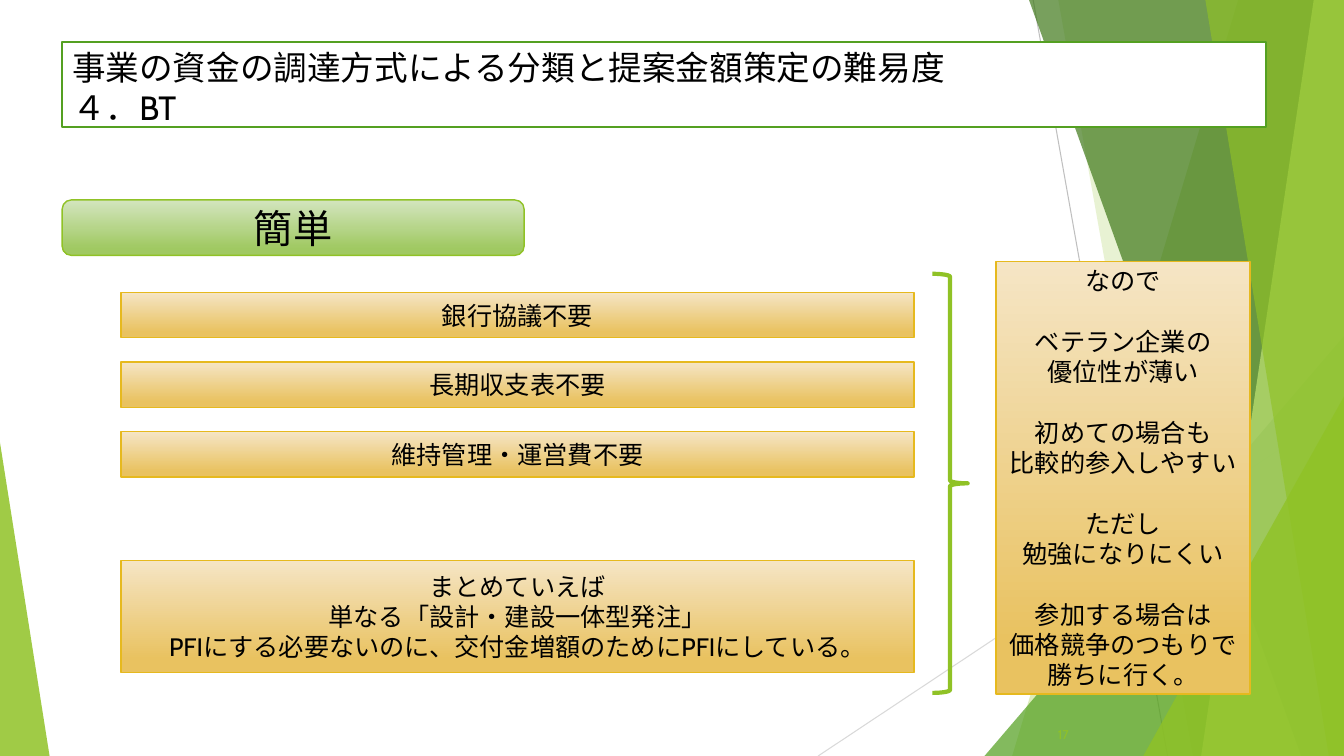
from pptx import Presentation
from pptx.dml.color import RGBColor
from pptx.enum.shapes import MSO_CONNECTOR, MSO_SHAPE as SHAPE
from pptx.enum.text import MSO_ANCHOR as ANCHOR, PP_ALIGN as ALIGN
from pptx.oxml.ns import qn
from pptx.util import Inches, Pt
from lxml.etree import SubElement

# Grid of 160 columns by 90 rows
WIDTH, HEIGHT = Inches(13.333), Inches(7.5)
COLS, ROWS = 160, 90

BLACK = RGBColor(0x00, 0x00, 0x00)
WHITE = RGBColor(0xFF, 0xFF, 0xFF)
GRAY = RGBColor(0xBF, 0xBF, 0xBF)
PALE_GRAY = RGBColor(0xD9, 0xD9, 0xD9)
GREEN = RGBColor(0x90, 0xC2, 0x26)
MID_GREEN = RGBColor(0x54, 0xA0, 0x21)
DARK_GREEN = RGBColor(0x3F, 0x78, 0x19)
LIME = RGBColor(0xC0, 0xE4, 0x74)
GOLD = RGBColor(0xE6, 0xB9, 0x1E)
GREEN_FADE = RGBColor(0xD3, 0xE5, 0xBE), RGBColor(0xA0, 0xC9, 0x62)
GOLD_FADE = RGBColor(0xF5, 0xE5, 0xC5), RGBColor(0xE9, 0xC2, 0x60)

FONT = "Cabin"
BODY = {"name": FONT, "size": Pt(18)}
BLANK_LINE = Pt(21.7)

TITLE = "事業の資金の調達方式による分類と提案金額策定の難易度\v４．BT"
REASONS = ["銀行協議不要", "長期収支表不要", "維持管理・運営費不要"]
SUMMARY = [
    "まとめていえば",
    "単なる「設計・建設一体型発注」",
    "PFIにする必要ないのに、交付金増額のためにPFIにしている。",
]
CONCLUSIONS = [
    ["なので"],
    ["ベテラン企業の", "優位性が薄い"],
    ["初めての場合も", "比較的参入しやすい"],
    ["ただし", "勉強になりにくい"],
    ["参加する場合は", "価格競争のつもりで", "勝ちに行く。"],
]


def col(n):
    return round(WIDTH * n / COLS)


def row(n):
    return round(HEIGHT * n / ROWS)


def fill_clear(sp, color, opacity):
    """Fill without outline, at an opacity in percent."""
    sp.shadow.inherit = False
    sp.line.fill.background()
    sp.fill.solid()
    sp.fill.fore_color.rgb = color
    clr = sp._element.spPr.find(qn("a:solidFill"))[0]
    SubElement(clr, qn("a:alpha")).set("val", str(opacity * 1000))


def add_hairline(s, x1, y1, x2, y2, color):
    line = s.shapes.add_connector(
        MSO_CONNECTOR.STRAIGHT, col(x1), row(y1), col(x2), row(y2))
    line.line.color.rgb = color
    line.line.width = Pt(0.75)
    SubElement(line._element.spPr, qn("a:effectLst"))


def add_band(s, top, bottom, color, opacity):
    """Full-height band from a slanted left edge to the right slide edge."""
    builder = s.shapes.build_freeform(col(top), 0)
    builder.add_line_segments(
        [(WIDTH, 0), (WIDTH, HEIGHT), (col(bottom), HEIGHT)], close=True)
    fill_clear(builder.convert_to_shape(), color, opacity)


def add_triangle(s, x, y, w, apex, color, opacity):
    """Triangle standing on the bottom slide edge."""
    sp = s.shapes.add_shape(
        SHAPE.ISOSCELES_TRIANGLE, col(x), row(y), col(w), row(ROWS - y))
    sp.adjustments[0] = apex
    fill_clear(sp, color, opacity)


def add_outlined(s, kind, x, y, w, h, color, width):
    sp = s.shapes.add_shape(kind, col(x), row(y), col(w), row(h))
    sp.shadow.inherit = False
    sp.fill.background()
    sp.line.color.rgb = color
    sp.line.width = Pt(width)
    return sp


def write(sp, groups, font, align=ALIGN.CENTER, anchor=ANCHOR.MIDDLE, color=BLACK):
    """Write groups of paragraphs, one line of space between groups."""
    tf = sp.text_frame
    tf.word_wrap = True
    tf.vertical_anchor = anchor
    p = tf.paragraphs[0]
    for g, group in enumerate(groups):
        for i, text in enumerate(group):
            if g or i:
                p = tf.add_paragraph()
            p.text = text
            p.alignment = align
            if g and not i:
                p.space_before = BLANK_LINE
            for r in p.runs:
                for key, value in font.items():
                    setattr(r.font, key, value)
                r.font.color.rgb = color


def add_fade_box(s, x, y, w, h, groups, kind=SHAPE.RECTANGLE, fade=GOLD_FADE,
                 line=GOLD, font=BODY):
    sp = add_outlined(s, kind, x, y, w, h, line, 1)
    sp.fill.gradient()
    sp.fill.gradient_angle = 270
    for stop, position, color in zip(sp.fill.gradient_stops, (0, 0.88), fade):
        stop.position = position
        stop.color.rgb = color
    write(sp, groups, font)


def add_backdrop(s):
    add_hairline(s, 123, 0, 139, ROWS, GRAY)
    add_hairline(s, COLS, 48.4, 97.4, ROWS, PALE_GRAY)
    add_band(s, 147.4, 120.5, GREEN, 30)
    add_band(s, 126, 142, GREEN, 20)
    add_triangle(s, 117.2, 40, 42.8, 1, MID_GREEN, 72)
    add_band(s, 122.5, 154.9, DARK_GREEN, 70)
    add_band(s, 156.4, 143, LIME, 70)
    add_band(s, 143.5, 158.2, GREEN, 65)
    add_triangle(s, 136.1, 47.2, 23.9, 1, GREEN, 80)
    add_triangle(s, 0, 52.7, 5.9, 0, GREEN, 85)


def add_title(s):
    sp = add_outlined(s, SHAPE.RECTANGLE, 7.4, 5, 143.3, 10.1, MID_GREEN, 1.5)
    sp.fill.solid()
    sp.fill.fore_color.rgb = WHITE
    write(sp, [[TITLE]], {"name": FONT, "size": Pt(24)}, ALIGN.LEFT, ANCHOR.TOP)


def add_page_number(s, number):
    sp = s.shapes.add_textbox(col(120.2), row(85), col(8.2), row(4.8))
    write(sp, [[number]], {"name": FONT, "size": Pt(9)}, ALIGN.RIGHT, color=GREEN)


def main():
    prs = Presentation()
    prs.slide_width, prs.slide_height = WIDTH, HEIGHT
    s = prs.slides.add_slide(prs.slide_layouts[6])

    add_backdrop(s)
    add_title(s)
    add_fade_box(s, 7.4, 23.8, 55, 6.6, [["簡単"]], SHAPE.ROUNDED_RECTANGLE,
                 GREEN_FADE, GREEN, {"name": FONT, "size": Pt(28)})
    for i, reason in enumerate(REASONS):
        add_fade_box(s, 14.4, 34.8 + 8.3 * i, 94.4, 5.4, [[reason]])
    add_fade_box(s, 14.4, 66.7, 94.4, 13.4, [SUMMARY])
    add_outlined(s, SHAPE.RIGHT_BRACE, 111, 32.6, 4.2, 49.9, GREEN, 3)
    add_fade_box(s, 118.6, 31.1, 30.2, 51.5, CONCLUSIONS)
    add_page_number(s, "17")

    prs.save("out.pptx")


if __name__ == "__main__":
    main()
